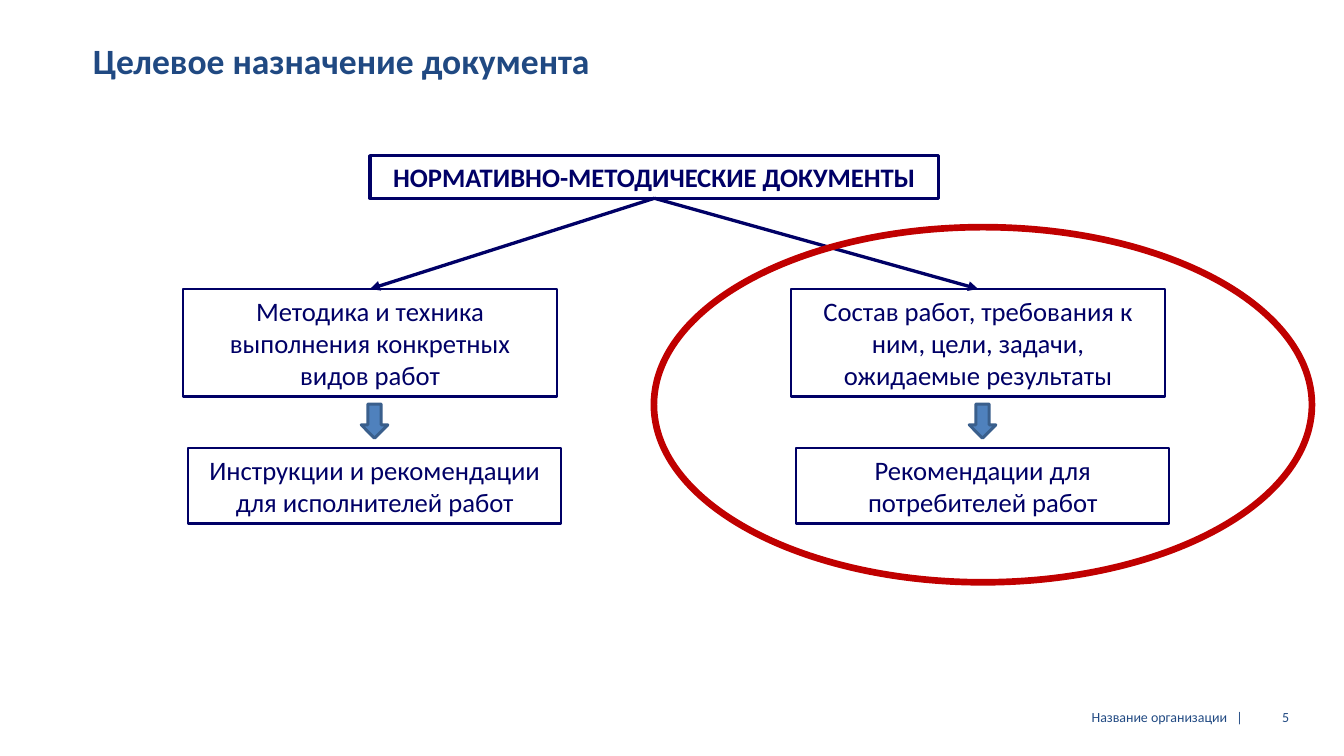
from lxml import etree
from pptx import Presentation
from pptx.dml.color import RGBColor
from pptx.enum import shapes, text
from pptx.oxml.ns import qn
from pptx.util import Pt

NAVY, BLUE = "000066", "204982"
MSO, AL = shapes.MSO_SHAPE, text.PP_ALIGN


def rgb(value):
    return RGBColor.from_string(value)


def write(sp, content, size, color, align, bold=False, margins=(7.2, 3.6)):
    tf = sp.text_frame
    tf.word_wrap = True
    tf.vertical_anchor = text.MSO_ANCHOR.MIDDLE
    tf.margin_left = tf.margin_right = Pt(margins[0])
    tf.margin_top = tf.margin_bottom = Pt(margins[1])
    p = tf.paragraphs[0]
    p.text = content
    p.alignment = align
    p.font.name = "Calibri"
    p.font.size = Pt(size)
    p.font.bold = bold
    p.font.color.rgb = rgb(color)


prs = Presentation()
prs.slide_width, prs.slide_height = Pt(907.2), Pt(510.5)
s = prs.slides.add_slide(prs.slide_layouts[6])

for x, y, w, h, content, size, align, bold in [
    (45.4, 17.3, 617.8, 47.5, "Целевое назначение документа", 24, AL.LEFT, True),
    (657.4, 471.6, 198.7, 24.5, "Название организации   |", 9.4, AL.RIGHT, False),
    (848.2, 471.6, 58.3, 24.5, "5", 9.4, AL.LEFT, False),
]:
    sp = s.shapes.add_textbox(Pt(x), Pt(y), Pt(w), Pt(h))
    write(sp, content, size, BLUE, align, bold, (17.3, 8.6))

columns = [
    (123.8, "Методика и техника выполнения конкретных видов работ",
     "Инструкции и рекомендации для исполнителей работ"),
    (534.2, "Состав работ, требования к ним, цели, задачи, ожидаемые результаты",
     "Рекомендации для потребителей работ"),
]
boxes = [(249.8, 105.1, 383.8, 28.8, 2.25, "НОРМАТИВНО-МЕТОДИЧЕСКИЕ ДОКУМЕНТЫ", True)]
for x, topic, result in columns:
    boxes.append((x, 195.1, 252, 72.7, 1.5, topic, False))
    boxes.append((x + 3.2, 302.4, 252, 51.1, 1.5, result, False))

rects = []
for x, y, w, h, weight, content, bold in boxes:
    sp = s.shapes.add_shape(MSO.RECTANGLE, Pt(x), Pt(y), Pt(w), Pt(h))
    sp.shadow.inherit = False
    sp.fill.background()
    sp.line.color.rgb = rgb(NAVY)
    sp.line.width = Pt(weight)
    write(sp, content, 18, NAVY, AL.CENTER, bold)
    rects.append(sp)

header, topics = rects[0], rects[1::2]
for topic in topics:
    cxn = s.shapes.add_connector(shapes.MSO_CONNECTOR.STRAIGHT, 0, 0, 0, 0)
    cxn.begin_connect(header, 2)
    cxn.end_connect(topic, 0)
    cxn.line.color.rgb = rgb(NAVY)
    cxn.line.width = Pt(2.25)
    etree.SubElement(cxn.line._get_or_add_ln(), qn("a:tailEnd"), type="triangle")
    etree.SubElement(cxn._element.spPr, qn("a:effectLst"))

for x, topic, result in columns:
    sp = s.shapes.add_shape(MSO.DOWN_ARROW, Pt(x + 120), Pt(272.9), Pt(18), Pt(23))
    sp.shadow.inherit = False
    sp.fill.solid()
    sp.fill.fore_color.rgb = rgb("4F81BD")
    sp.line.color.rgb = rgb("3A5F8C")
    sp.line.width = Pt(2)

sp = s.shapes.add_shape(MSO.OVAL, Pt(441.4), Pt(153.4), Pt(444.2), Pt(239.8))
sp.shadow.inherit = False
sp.fill.background()
sp.line.color.rgb = rgb("C00000")
sp.line.width = Pt(4.5)

prs.save("out.pptx")
